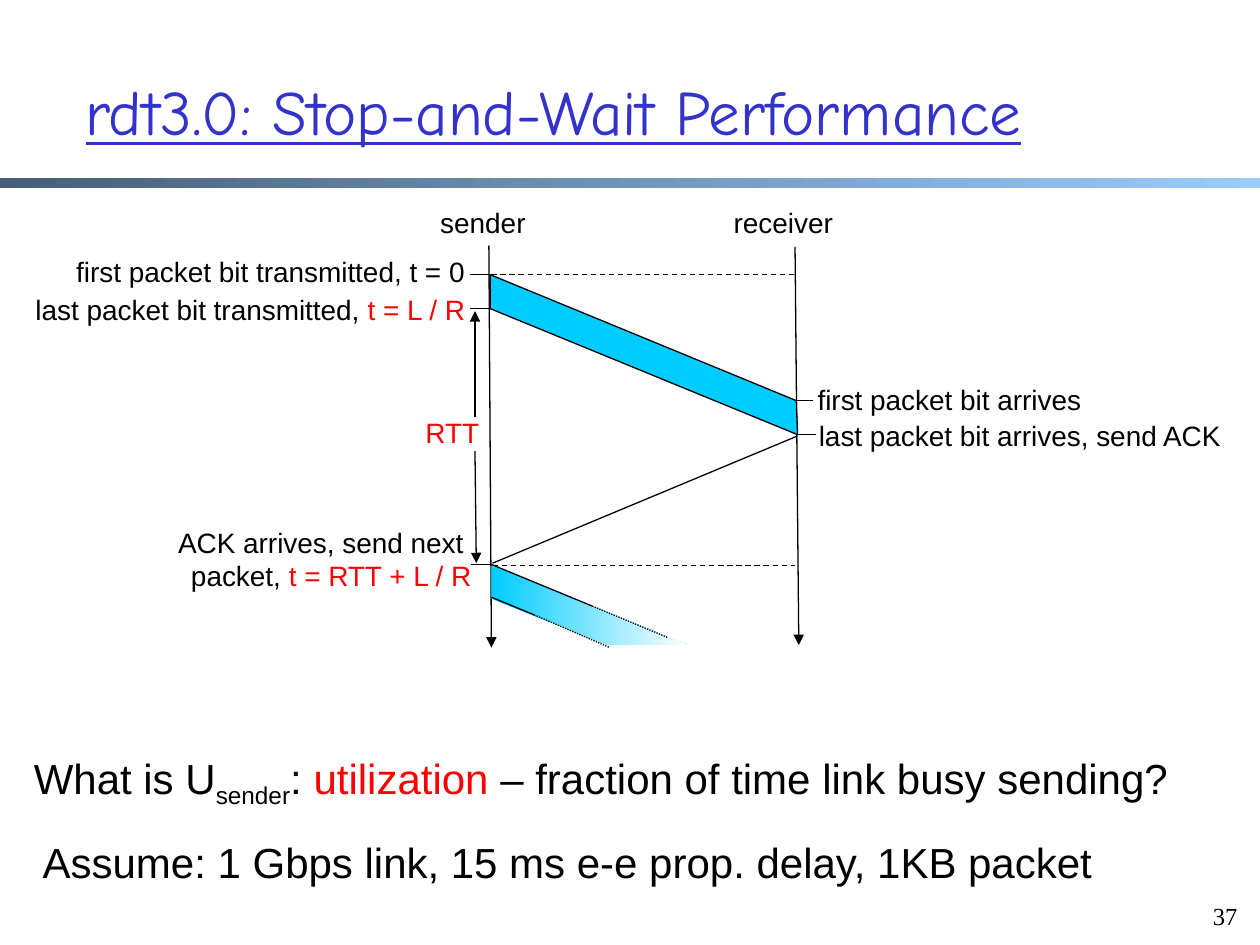
import pptx
import pptx.dml.color
import pptx.enum.dml
import pptx.enum.shapes
import pptx.enum.text
import pptx.oxml
import pptx.oxml.ns
import pptx.util
from pptx.util import Inches

COLORS = {
    "black": "000000", "white": "FFFFFF", "red": "FF0000", "title": "3333CC",
    "packet": "00CCFF", "bar_dark": "475E76", "bar_light": "99CCFF",
}
DASHES = pptx.enum.dml.MSO_LINE_DASH_STYLE
ALIGN = pptx.enum.text.PP_ALIGN
ANCHOR = pptx.enum.text.MSO_ANCHOR


def rgb(name):
    """Return the named colour."""
    return pptx.dml.color.RGBColor.from_string(COLORS[name])


def style_font(font, size, color, face="Arial"):
    """Set face, size and colour of a font."""
    font.name = face
    font.size = pptx.util.Pt(size)
    font.color.rgb = rgb(color)


def set_gradient(shape, start, end):
    """Fill a shape from left to right with two colours."""
    shape.fill.gradient()
    shape.fill.gradient_angle = 0
    for stop, color in zip(shape.fill.gradient_stops, (start, end)):
        stop.color.rgb = rgb(color)


def add_title(page, text):
    """Place the underlined title."""
    title = page.shapes.title
    title.left, title.top = Inches(0.58), Inches(0.25)
    title.width, title.height = Inches(8.91), Inches(1.25)
    title.text_frame.text = text
    title.text_frame.vertical_anchor = ANCHOR.MIDDLE
    para = title.text_frame.paragraphs[0]
    para.alignment = ALIGN.LEFT
    style_font(para.runs[0].font, 36, "title", "Comic Neue")
    para.runs[0].font.underline = True


def add_bar(page):
    """Draw the gradient bar below the title."""
    bar = page.shapes.add_shape(
        pptx.enum.shapes.MSO_SHAPE.RECTANGLE,
        Inches(0), Inches(1.41), Inches(10), Inches(0.08))
    bar.shadow.inherit = False
    bar.line.fill.background()
    set_gradient(bar, "bar_dark", "bar_light")


def add_text(page, place, *lines, size=16, align=ALIGN.LEFT, face="Arial", fill=None):
    """Add a text box whose lines are lists of (text, colour) spans."""
    box = page.shapes.add_textbox(*map(Inches, place))
    if fill:
        box.fill.solid()
        box.fill.fore_color.rgb = rgb(fill)
    frame = box.text_frame
    frame.word_wrap = True
    for index, spans in enumerate(lines):
        para = frame.add_paragraph() if index else frame.paragraphs[0]
        para.alignment = align
        for text, color in spans:
            span = para.add_run()
            span.text = text
            style_font(span.font, size, color, face)
    return box


def add_line(page, start, end, dash=None, arrow=False):
    """Draw a thin black line, optionally dashed or with an arrowhead."""
    line = page.shapes.add_connector(
        pptx.enum.shapes.MSO_CONNECTOR.STRAIGHT, *map(Inches, (*start, *end)))
    line.line.color.rgb = rgb("black")
    line.line.width = pptx.util.Pt(0.75)
    if dash:
        line.line.dash_style = dash
    if arrow:
        head = pptx.oxml.parse_xml(
            f'<a:tailEnd {pptx.oxml.ns.nsdecls("a")} type="triangle"/>')
        line.line._get_or_add_ln().append(head)
    line._element.spPr.append(
        pptx.oxml.parse_xml(f'<a:effectLst {pptx.oxml.ns.nsdecls("a")}/>'))


def add_band(page, points):
    """Draw a closed packet band through the points."""
    corners = [(Inches(x), Inches(y)) for x, y in points]
    builder = page.shapes.build_freeform(*corners[0])
    builder.add_line_segments(corners[1:], close=True)
    band = builder.convert_to_shape()
    band.shadow.inherit = False
    return band


def add_packets(page):
    """Draw the full packet and the fading next packet."""
    packet = add_band(page, [(3.89, 2.18), (6.32, 3.18), (6.33, 3.45), (3.89, 2.45)])
    packet.fill.solid()
    packet.fill.fore_color.rgb = rgb("packet")
    packet.line.color.rgb = rgb("black")
    packet.line.width = pptx.util.Pt(0.75)
    following = add_band(page, [(3.9, 4.49), (5.46, 5.12), (4.83, 5.12), (3.9, 4.75)])
    following.line.fill.background()
    set_gradient(following, "packet", "white")
    for start, middle, end in (((3.9, 4.48), (4.7, 4.81), (5.3, 5.06)),
                               ((3.9, 4.74), (4.24, 4.88), (4.84, 5.14))):
        add_line(page, start, middle)
        add_line(page, middle, end, DASHES.ROUND_DOT)


def add_timeline(page):
    """Draw time axes, guides, ticks and the round-trip span."""
    add_line(page, (3.88, 1.95), (3.9, 5.14), arrow=True)
    add_line(page, (6.31, 1.96), (6.34, 5.12), arrow=True)
    for left, y in ((3.9, 2.18), (3.91, 4.49)):
        add_line(page, (left, y), (left + 2.4, y), DASHES.DASH)
    add_line(page, (3.91, 4.47), (6.33, 3.46))
    add_packets(page)
    for x, y in ((3.73, 2.18), (3.73, 2.45), (3.74, 4.48), (6.3, 3.18), (6.33, 3.45)):
        add_line(page, (x, y), (x + 0.15, y))
    add_line(page, (3.77, 3.58), (3.78, 4.47), arrow=True)
    add_line(page, (3.77, 3.31), (3.77, 2.47), arrow=True)


def add_labels(page):
    """Write the labels around the timeline."""
    for place, text in (((0.26, 1.97, 3.53, 0.39), "first packet bit transmitted, t = 0"),
                        ((3.3, 1.58, 0.97, 0.38), "sender"),
                        ((5.68, 1.58, 1.03, 0.38), "receiver")):
        add_text(page, place, [(text, "black")], align=ALIGN.RIGHT, fill="white")
    add_text(page, (0, 2.27, 3.79, 0.39),
             [("last packet bit transmitted, ", "black"), ("t = L / R", "red")],
             align=ALIGN.RIGHT)
    rtt = add_text(page, (3.01, 3.25, 0.93, 0.37), [("RTT", "red"), (" ", "black")],
                   align=ALIGN.RIGHT)
    rtt.text_frame.paragraphs[0].runs[1].font.size = pptx.util.Pt(10)
    add_text(page, (0.9, 4.12, 2.94, 0.69),
             [("ACK arrives, send next ", "black")],
             [("packet, ", "black"), ("t = RTT + L / R", "red")], align=ALIGN.RIGHT)
    add_text(page, (6.39, 2.99, 2.65, 0.39), [("first packet bit arrives", "black")])
    add_text(page, (6.4, 3.27, 3.41, 0.62),
             [("last packet bit arrives, send ACK", "black")])


def add_question(page):
    """Write the utilization question and its assumptions."""
    question = add_text(
        page, (0.17, 5.92, 9.5, 0.5),
        [("What is U", "black"), ("sender", "black"), (": ", "black"),
         ("utilization", "red"), (" – fraction of time link busy sending?", "black")],
        size=24)
    subscript = question.text_frame.paragraphs[0].runs[1]
    subscript.font._element.set("baseline", "-25000")
    add_text(page, (0.24, 6.59, 8.76, 0.5),
             [("Assume: 1 Gbps link, 15 ms e-e prop. delay, 1KB packet", "black")], size=24)


def main():
    """Build and save the slide."""
    deck = pptx.Presentation()
    deck.slide_width, deck.slide_height = Inches(10), Inches(7.5)
    page = deck.slides.add_slide(deck.slide_layouts.get_by_name("Title Only"))
    add_bar(page)
    add_title(page, "rdt3.0: Stop-and-Wait Performance")
    add_labels(page)
    add_timeline(page)
    add_question(page)
    number = add_text(page, (9.46, 7.05, 0.46, 0.38), [("37", "black")],
                      size=14, align=ALIGN.RIGHT, face="Times New Roman")
    number.text_frame.vertical_anchor = ANCHOR.BOTTOM
    deck.save("out.pptx")


if __name__ == "__main__":
    main()
